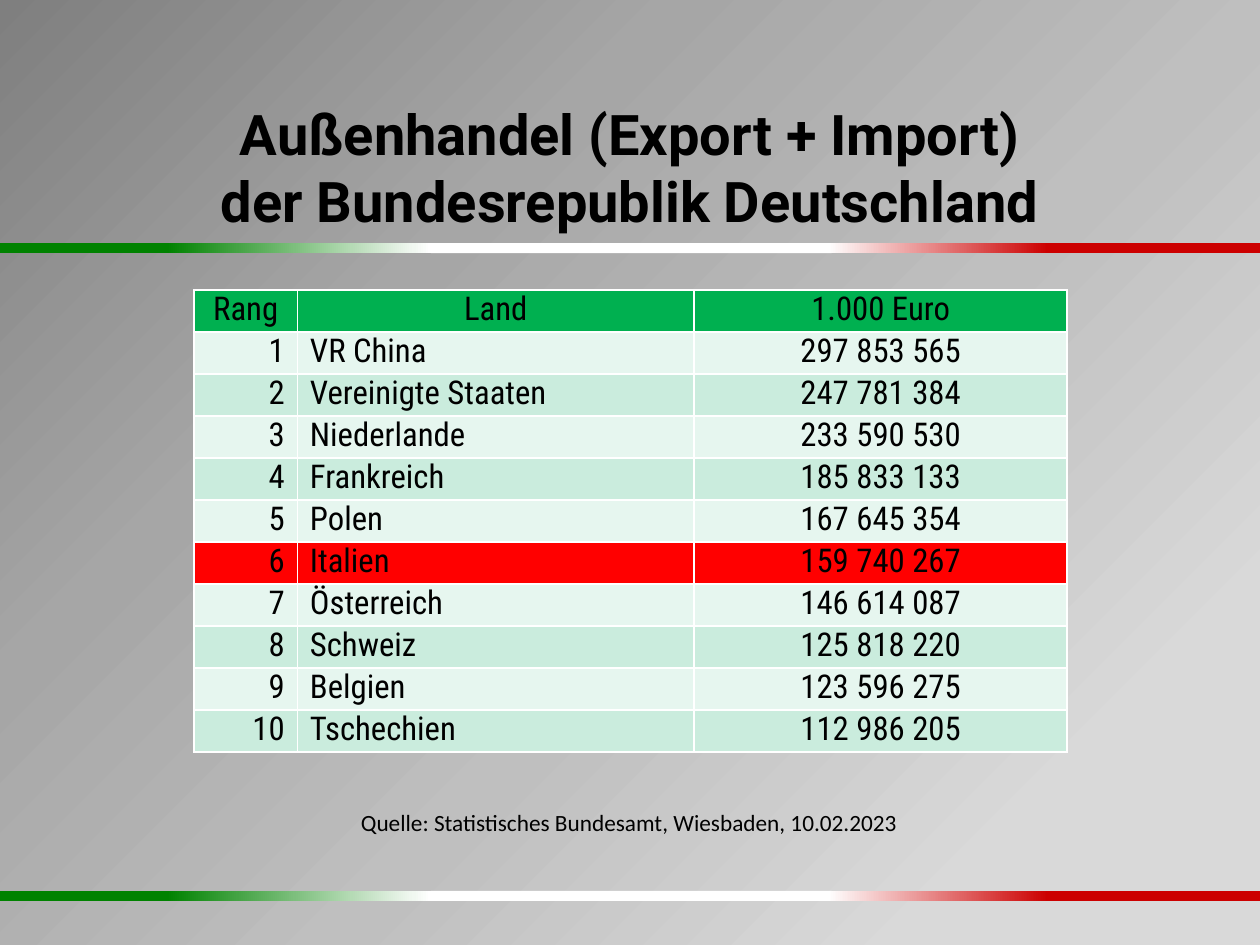
from lxml.etree import SubElement
from pptx import Presentation
from pptx.dml.color import RGBColor
from pptx.enum.shapes import MSO_SHAPE
from pptx.enum.text import MSO_ANCHOR, PP_ALIGN
from pptx.oxml.ns import qn
from pptx.util import Inches, Pt


def set_gradient(fill, element, stops, angle):
    fill.gradient()
    fill.gradient_angle = angle
    stop_list = element.find(".//" + qn("a:gsLst"))
    for stop in list(stop_list):
        stop_list.remove(stop)
    for position, color in stops:
        stop = SubElement(stop_list, qn("a:gs"), pos=str(position * 1000))
        SubElement(stop, qn("a:srgbClr"), val=color)


def write(para, text, font, size, align, bold=False):
    para.alignment = align
    span = para.add_run()
    span.text = text
    span.font.name = font
    span.font.size = Pt(size)
    span.font.bold = bold
    span.font.color.rgb = RGBColor.from_string("000000")


deck = Presentation()
deck.slide_width = Inches(10)
deck.slide_height = Inches(7.5)
page = deck.slides.add_slide(deck.slide_layouts[6])
backdrop = [(0, "D9D9D9"), (16, "D9D9D9"), (42, "BFBFBF"), (69, "A6A6A6"), (100, "7F7F7F")]
set_gradient(page.background.fill, page.element, backdrop, 135)

green = [(0, "008200"), (39, "008200"), (96, "F1F8F1"), (100, "FFFFFF")]
white = [(0, "FFFFFF"), (100, "FFFFFF")]
red = [(0, "FFFFFF"), (51, "CC0000"), (100, "CC0000")]
for top in (1.93, 7.07):
    for left, width, stops in ((-0.01, 3.43, green), (3.42, 3.18, white), (6.57, 3.43, red)):
        stripe = page.shapes.add_shape(
            MSO_SHAPE.RECTANGLE, Inches(left), Inches(top), Inches(width), Inches(0.08))
        stripe.shadow.inherit = False
        stripe.line.fill.background()
        if stops is white:
            stripe.fill.solid()
            stripe.fill.fore_color.rgb = RGBColor.from_string("FFFFFF")
        else:
            set_gradient(stripe.fill, stripe.element, stops, 0)

title = ["Außenhandel (Export + Import)", "der Bundesrepublik Deutschland"]
source = ["Quelle: Statistisches Bundesamt, Wiesbaden, 10.02.2023"]
for left, top, width, height, lines, font, size, bold in (
    (1.31, 0.73, 7.38, 1.18, title, "Roboto", 32, True),
    (1.58, 6.36, 6.83, 0.33, source, "Calibri", 13.3, False),
):
    box = page.shapes.add_textbox(Inches(left), Inches(top), Inches(width), Inches(height))
    frame = box.text_frame
    frame.word_wrap = True
    frame.vertical_anchor = MSO_ANCHOR.MIDDLE
    frame.margin_left = frame.margin_right = Inches(0.05)
    frame.margin_top = frame.margin_bottom = Inches(0.05)
    for index, line in enumerate(lines):
        para = frame.add_paragraph() if index else frame.paragraphs[0]
        write(para, line, font, size, PP_ALIGN.CENTER, bold)

partners = [
    ("VR China", "297 853 565"),
    ("Vereinigte Staaten", "247 781 384"),
    ("Niederlande", "233 590 530"),
    ("Frankreich", "185 833 133"),
    ("Polen", "167 645 354"),
    ("Italien", "159 740 267"),
    ("Österreich", "146 614 087"),
    ("Schweiz", "125 818 220"),
    ("Belgien", "123 596 275"),
    ("Tschechien", "112 986 205"),
]
rows = [("Rang", "Land", "1.000 Euro")]
rows += [(str(rank), *partner) for rank, partner in enumerate(partners, 1)]
table = page.shapes.add_table(
    len(rows), 3, Inches(1.54), Inches(2.3), Inches(6.93), Inches(3.67)).table
for column, width in zip(table.columns, (0.82, 3.15, 2.96)):
    column.width = Inches(width)
alignments = (PP_ALIGN.RIGHT, PP_ALIGN.LEFT, PP_ALIGN.CENTER)
for rank, values in enumerate(rows):
    table.rows[rank].height = Inches(3.67 / len(rows))
    if rank == 0:
        color = "00B050"
    elif values[1] == "Italien":
        color = "FF0000"
    else:
        color = "E6F6EF" if rank % 2 else "CAECDD"
    for index, value in enumerate(values):
        cell = table.cell(rank, index)
        cell.margin_left = cell.margin_right = Inches(0.1)
        cell.margin_top = cell.margin_bottom = 0
        properties = cell._tc.get_or_add_tcPr()
        for side in ("a:lnL", "a:lnR", "a:lnT", "a:lnB"):
            border = SubElement(properties, qn(side), w=str(Pt(1)))
            SubElement(SubElement(border, qn("a:solidFill")), qn("a:srgbClr"), val="FFFFFF")
        cell.fill.solid()
        cell.fill.fore_color.rgb = RGBColor.from_string(color)
        align = alignments[index] if rank else PP_ALIGN.CENTER
        write(cell.text_frame.paragraphs[0], value, "Roboto Condensed", 18.7, align)

deck.save("out.pptx")
